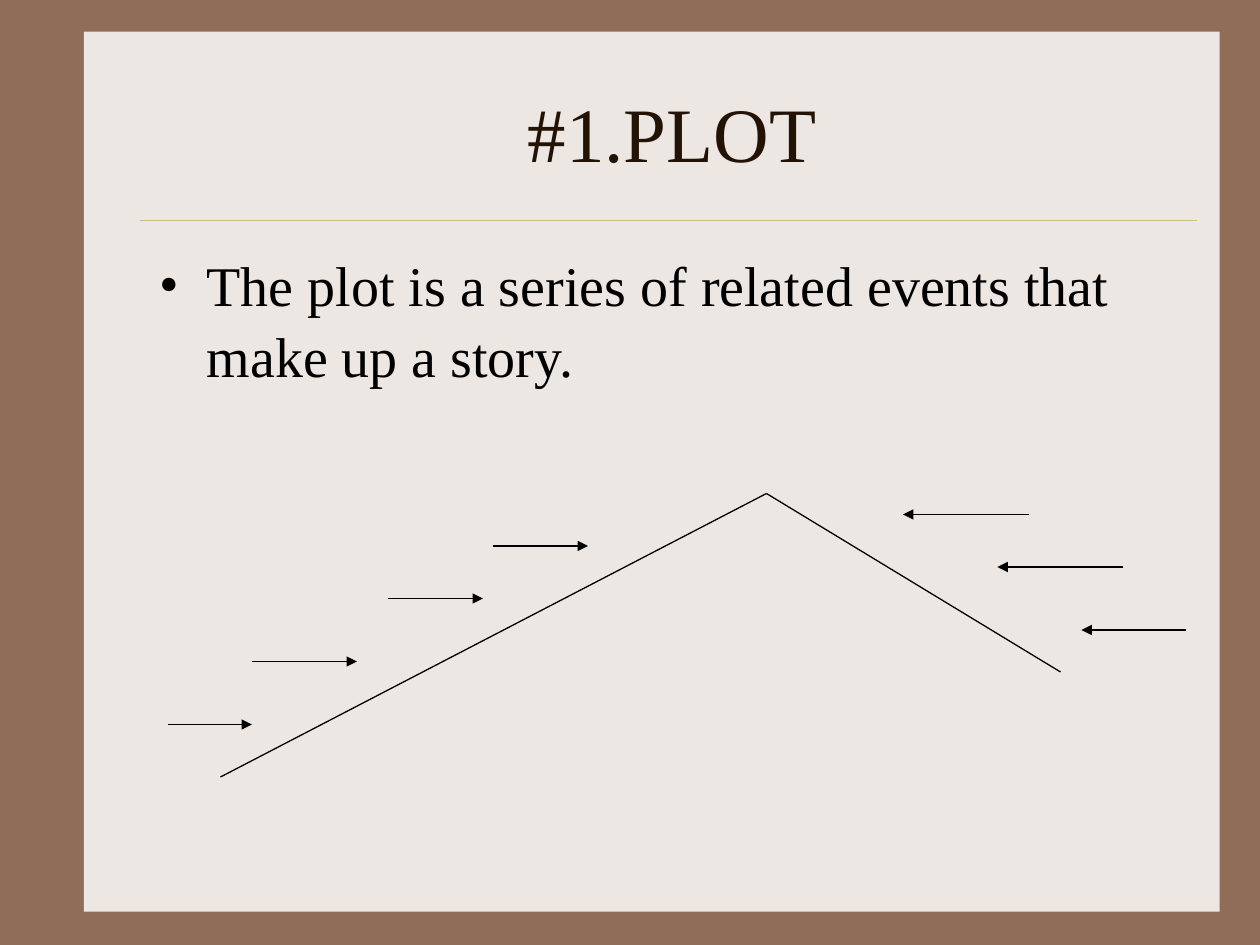
from lxml.etree import SubElement
from pptx import Presentation
from pptx.dml.color import RGBColor
from pptx.enum.shapes import MSO_CONNECTOR, MSO_SHAPE
from pptx.enum.text import MSO_ANCHOR, PP_ALIGN
from pptx.oxml.ns import qn
from pptx.util import Pt

FONT = "Times New Roman"
BLACK = "000000"


def color(hex_string):
    return RGBColor.from_string(hex_string)


def add_line(slide, start, end, line_color=BLACK, arrow=False):
    points = [Pt(value) for value in (*start, *end)]
    connector = slide.shapes.add_connector(MSO_CONNECTOR.STRAIGHT, *points)
    connector.line.color.rgb = color(line_color)
    connector.line.width = Pt(0.75)
    properties = connector._element.spPr
    if arrow:
        SubElement(properties.find(qn("a:ln")), qn("a:tailEnd"), type="triangle")
    SubElement(properties, qn("a:effectLst"))


def add_text(slide, box, text, size, text_color):
    frame = slide.shapes.add_textbox(*[Pt(value) for value in box]).text_frame
    frame.word_wrap = True
    paragraph = frame.paragraphs[0]
    paragraph.text = text
    return frame, paragraph, (size, text_color)


def style_paragraph(paragraph, size, text_color):
    paragraph.font.name = FONT
    paragraph.font.size = Pt(size)
    paragraph.font.color.rgb = color(text_color)


def add_background(slide, box):
    slide.background.fill.solid()
    slide.background.fill.fore_color.rgb = color("906D58")
    panel = slide.shapes.add_shape(MSO_SHAPE.RECTANGLE, *[Pt(value) for value in box])
    panel.shadow.inherit = False
    panel.fill.solid()
    panel.fill.fore_color.rgb = color("EDE7E3")
    panel.line.fill.background()


def add_title(slide, box):
    frame, paragraph, style = add_text(slide, box, "#1.PLOT", 44, "221304")
    frame.vertical_anchor = MSO_ANCHOR.MIDDLE
    paragraph.alignment = PP_ALIGN.CENTER
    style_paragraph(paragraph, *style)
    # Rule below the title
    left, top, width, height = box
    rule_y = top + height + 6
    add_line(slide, (left - 4, rule_y), (left + width, rule_y), "CBBD83")


def add_body(slide, box):
    text = "The plot is a series of related events that make up a story."
    _, paragraph, style = add_text(slide, box, text, 32, BLACK)
    paragraph.line_spacing = 1.05
    properties = paragraph._p.get_or_add_pPr()
    properties.set("marL", str(Pt(27)))
    properties.set("indent", str(-Pt(27)))
    bullet_color = SubElement(properties, qn("a:buClr"))
    SubElement(bullet_color, qn("a:srgbClr"), val=BLACK)
    SubElement(properties, qn("a:buFont"), typeface=FONT)
    SubElement(properties, qn("a:buChar"), char="•")
    style_paragraph(paragraph, *style)


def add_plot_diagram(slide, left, top):
    # Rising and falling action
    peak = (left + 342, top)
    add_line(slide, (left + 30, top + 162), peak)
    add_line(slide, peak, (left + 510, top + 102))

    # Event arrows: start x, end x, y
    arrows = [
        (0, 48, 132), (48, 108, 96), (126, 180, 60), (186, 240, 30),
        (582, 522, 78), (546, 474, 42), (492, 420, 12),
    ]
    for start_x, end_x, y in arrows:
        add_line(slide, (left + start_x, top + y), (left + end_x, top + y), arrow=True)


def main():
    presentation = Presentation()
    presentation.slide_width = Pt(720)
    presentation.slide_height = Pt(540)
    slide = presentation.slides.add_slide(presentation.slide_layouts[6])
    add_background(slide, (48, 18, 649, 503))
    add_title(slide, (84, 30, 600, 90))
    add_body(slide, (84, 138, 600, 324))
    add_plot_diagram(slide, 96, 282)
    presentation.save("out.pptx")


if __name__ == "__main__":
    main()
